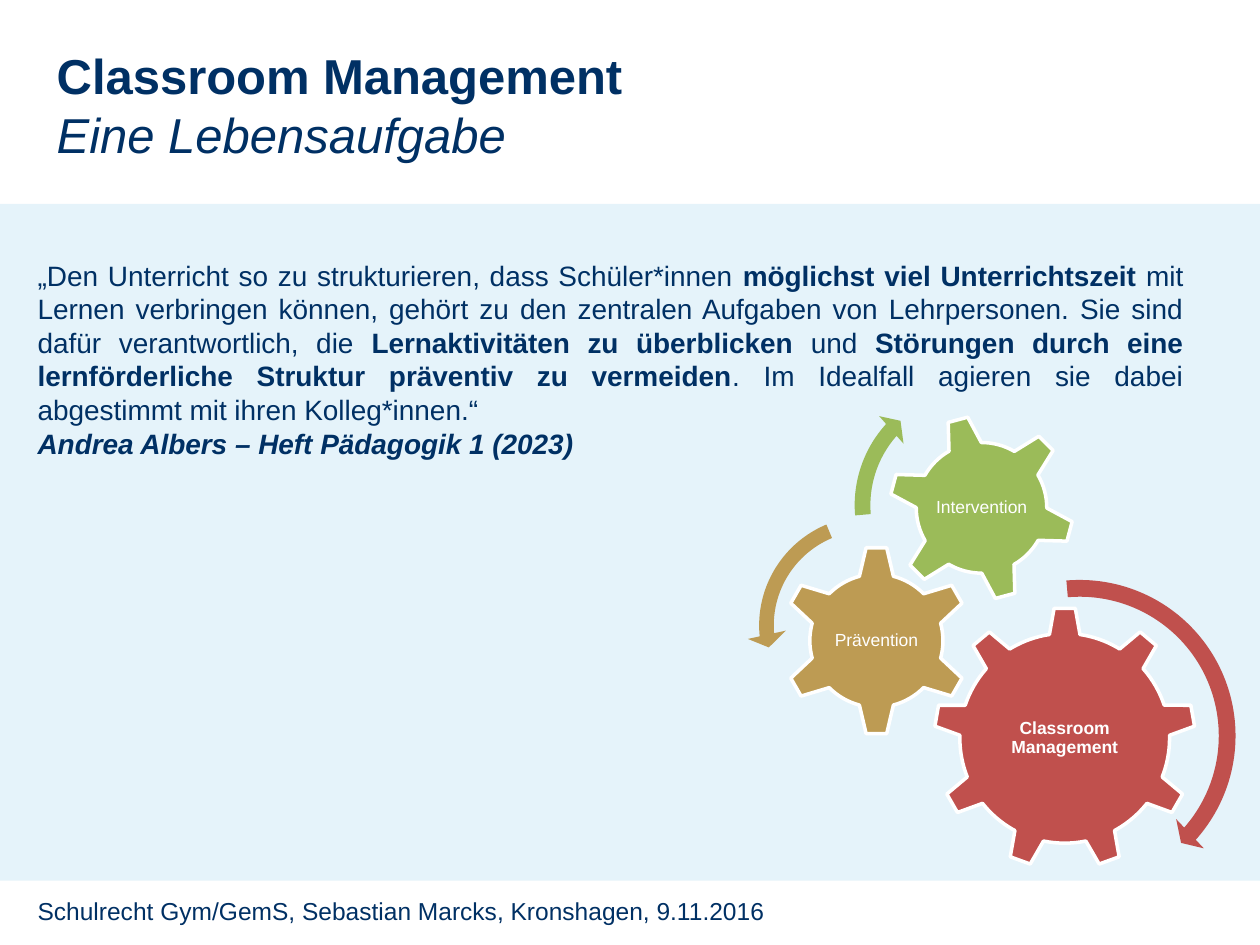
from lxml.etree import SubElement
from pptx import Presentation
from pptx.dml.color import RGBColor
from pptx.enum.shapes import MSO_SHAPE
from pptx.enum.text import MSO_ANCHOR, MSO_AUTO_SIZE, PP_ALIGN
from pptx.oxml.ns import qn
from pptx.util import Pt

THEME = {
    "font": "Arial", "navy": "003064", "band": "008CCF", "white": "FFFFFF",
    "red": "C0504D", "gold": "BD9B53", "green": "9BBB59",
    "title": 28, "body": 16, "footer": 14, "label": 10,
}
BOLD, ITALIC = {"bold": True}, {"italic": True}

TITLE = [
    [("Classroom Management", BOLD)],
    [("Eine Lebensaufgabe", {"bold": False, "italic": True})],
]
QUOTE = [
    [
        ("„Den Unterricht so zu strukturieren, dass Schüler*innen ", {}),
        ("möglichst viel Unterrichtszeit ", BOLD),
        ("mit Lernen verbringen können, gehört zu den zentralen Aufgaben von "
         "Lehrpersonen. Sie sind dafür verantwortlich, die ", {}),
        ("Lernaktivitäten zu überblicken ", BOLD),
        ("und ", {}),
        ("Störungen durch eine lernförderliche Struktur präventiv zu vermeiden", BOLD),
        (". Im Idealfall agieren sie dabei abgestimmt mit ihren Kolleg*innen.“ ", {}),
    ],
    [("Andrea Albers – Heft Pädagogik 1 (2023)", BOLD | ITALIC)],
]
FOOTER = [[("Schulrecht Gym/GemS, Sebastian Marcks, Kronshagen, 9.11.2016", {})]]

GEARS = [
    {"text": "Classroom Management", "format": BOLD, "color": "red",
     "kind": MSO_SHAPE.GEAR_9, "center": (608.4, 421.9), "size": 149.8,
     "turn": 0, "label": (89.3, 77)},
    {"text": "Prävention", "format": {}, "color": "gold",
     "kind": MSO_SHAPE.GEAR_6, "center": (500.8, 366.1), "size": 108.7,
     "turn": 0, "label": (54, 54)},
    {"text": "Intervention", "format": {}, "color": "green",
     "kind": MSO_SHAPE.GEAR_6, "center": (560.9, 290.2), "size": 106.6,
     "turn": 345, "label": (59.8, 59.8)},
]
ARROWS = [
    (MSO_SHAPE.CIRCULAR_ARROW, "red", (617, 420.5), 191.5,
     (0.05, 2.99, 24.96, 159.06, 0.06)),
    (MSO_SHAPE.LEFT_CIRCULAR_ARROW, "gold", (496.4, 357.5), 139,
     (0.06, 4.3, 104.89, 148.38, 0.08)),
    (MSO_SHAPE.CIRCULAR_ARROW, "green", (557.3, 288.7), 149.8,
     (0.06, 3.94, 133.14, 105.08, 0.07)),
]


def color(name):
    return RGBColor.from_string(THEME[name])


def centered(center, width, height):
    x, y = center
    return Pt(x - width / 2), Pt(y - height / 2), Pt(width), Pt(height)


def add_solid(slide, kind, box, fill, outline=None):
    solid = slide.shapes.add_shape(kind, *box)
    solid.shadow.inherit = False
    solid.fill.solid()
    solid.fill.fore_color.rgb = color(fill)
    if outline:
        solid.line.color.rgb = color(outline)
        solid.line.width = Pt(2)
    else:
        solid.line.fill.background()
    return solid


def write(holder, paragraphs, size, ink="navy", align=PP_ALIGN.LEFT,
          anchor=MSO_ANCHOR.TOP, spacing=1.0):
    frame = holder.text_frame
    frame.word_wrap = True
    frame.auto_size = MSO_AUTO_SIZE.NONE
    frame.vertical_anchor = anchor
    for index, runs in enumerate(paragraphs):
        paragraph = frame.add_paragraph() if index else frame.paragraphs[0]
        paragraph.alignment = align
        paragraph.line_spacing = spacing
        for text, extra in runs:
            run = paragraph.add_run()
            run.text = text
            run.font.color.rgb = color(ink)
            values = {"name": THEME["font"], "size": Pt(THEME[size])} | extra
            for key, value in values.items():
                setattr(run.font, key, value)
    return frame


def add_text(slide, box, paragraphs, size, **options):
    return write(slide.shapes.add_textbox(*box), paragraphs, size, **options)


def add_label(slide, gear):
    frame = add_text(slide, centered(gear["center"], *gear["label"]),
                     [[(gear["text"], gear["format"])]], "label", ink="white",
                     align=PP_ALIGN.CENTER, anchor=MSO_ANCHOR.MIDDLE, spacing=0.9)
    for side in ("left", "right", "top", "bottom"):
        setattr(frame, f"margin_{side}", Pt(1))


def main():
    deck = Presentation()
    deck.slide_width, deck.slide_height = Pt(720), Pt(540)
    slide = deck.slides.add_slide(deck.slide_layouts[5])

    band = add_solid(slide, MSO_SHAPE.RECTANGLE,
                     (0, Pt(116.6), Pt(720), Pt(386.7)), "band")
    tint = next(band.fill._xPr.iter(qn("a:srgbClr")))
    SubElement(tint, qn("a:alpha"), val="10000")

    title = slide.shapes.title
    title.left, title.top, title.width, title.height = map(Pt, (25.2, 22.3, 385.2, 75))
    write(title, TITLE, "title")
    add_text(slide, map(Pt, (14.4, 508.3, 617.8, 31)), FOOTER, "footer")

    for gear in GEARS:
        wheel = add_solid(slide, gear["kind"],
                          centered(gear["center"], gear["size"], gear["size"]),
                          gear["color"], "white")
        wheel.rotation = gear["turn"]
        add_label(slide, gear)

    for kind, fill, center, size, adjustments in ARROWS:
        arrow = add_solid(slide, kind, centered(center, size, size), fill)
        for index, value in enumerate(adjustments):
            arrow.adjustments[index] = value

    add_text(slide, map(Pt, (14.4, 144, 668.9, 123.8)), QUOTE, "body",
             align=PP_ALIGN.JUSTIFY)
    deck.save("out.pptx")


if __name__ == "__main__":
    main()
